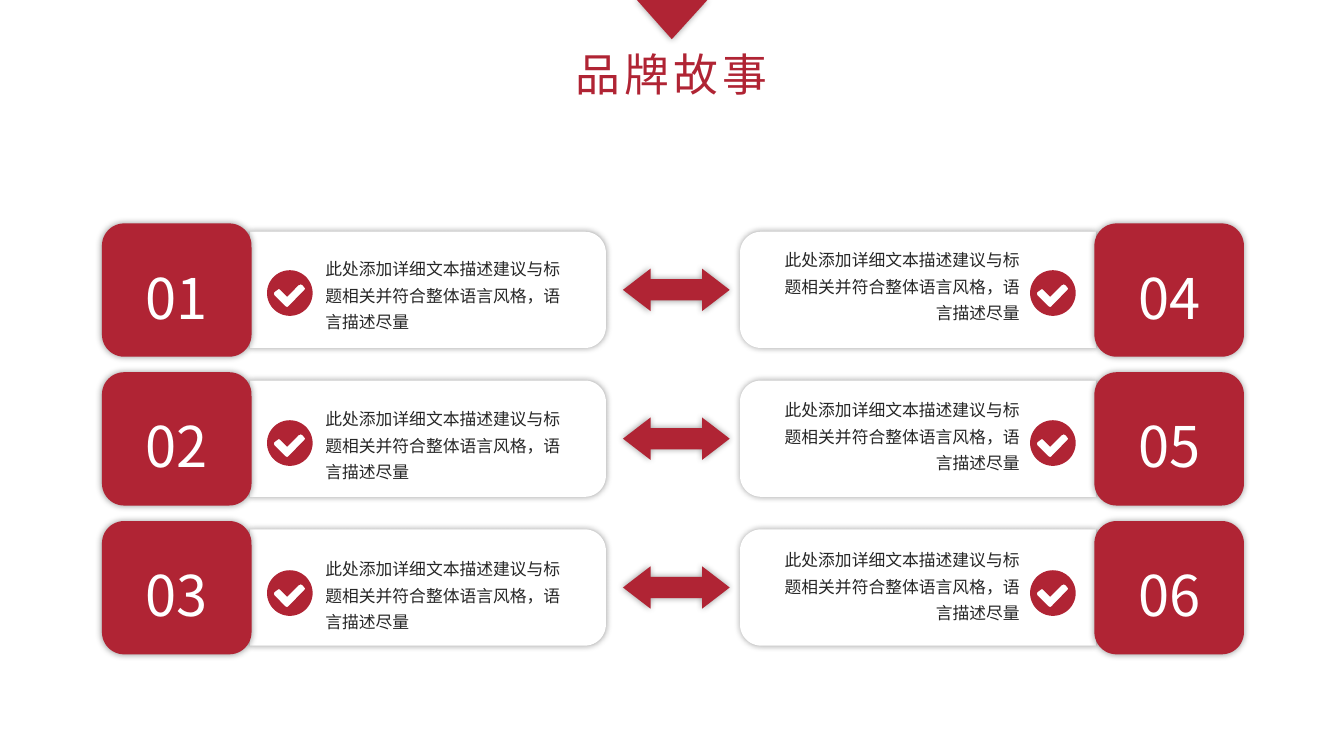
from math import cos, radians, sin

from lxml.etree import SubElement
from pptx import Presentation
from pptx.dml.color import RGBColor
from pptx.enum.shapes import MSO_SHAPE
from pptx.enum.text import MSO_ANCHOR, MSO_AUTO_SIZE, PP_ALIGN
from pptx.oxml.ns import qn
from pptx.util import Cm, Pt

RED = RGBColor(0xB0, 0x24, 0x34)
WHITE = RGBColor(0xFF, 0xFF, 0xFF)
INK = RGBColor(0x26, 0x26, 0x26)
FACE = "Noto Sans CJK SC"
BODY = "此处添加详细文本描述建议与标题相关并符合整体语言风格，语言描述尽量"

WIDTH = 12.7        # one card, badge and panel together
PITCH = 3.75        # from one row to the next
DRIFT = 0.03        # extra step of the icon and text in each row
SIDES = {
    "left": {"x": 2.57, "first": 1, "badge": 0, "icon": 4.16,
             "text": 5.63, "drop": 0.75, "align": PP_ALIGN.LEFT},
    "right": {"x": 18.65, "first": 4, "badge": 8.93, "icon": 7.31,
              "text": 0.83, "drop": 0.52, "align": PP_ALIGN.RIGHT},
}
# Tick outline, in percent of the icon
TICK = [(82, 38), (78, 33), (74, 31), (69, 33), (44, 58), (29, 43), (26, 41),
        (23, 43), (16, 48), (15, 51), (16, 55), (40, 79), (44, 81), (47, 79),
        (82, 43), (84, 40)]


def paint(shape, color, glow=True):
    """Fill the shape without a line, with a soft shadow if glow is set."""
    shape.fill.solid()
    shape.fill.fore_color.rgb = color
    shape.line.fill.background()
    shape.shadow.inherit = False
    if glow:
        effects = shape.element.spPr.find(qn("a:effectLst"))
        outer = SubElement(effects, qn("a:outerShdw"), blurRad=str(Pt(5)),
                           dist="0", dir="0", algn="ctr", rotWithShape="0")
        black = SubElement(outer, qn("a:srgbClr"), val="000000")
        SubElement(black, qn("a:alpha"), val="40000")


def write(shape, text, size, color, frame, para, spacing=0):
    """Put one paragraph in the shape, with frame and paragraph formats."""
    body = shape.text_frame
    body.word_wrap = True
    line = body.paragraphs[0]
    run = line.add_run()
    run.text = text
    font = {"size": Pt(size), "name": FACE, "bold": False}
    for target, formats in ((body, frame), (line, para), (run.font, font)):
        for key, value in formats.items():
            setattr(target, key, value)
    run.font.color.rgb = color
    props = run._r.get_or_add_rPr()
    SubElement(props, qn("a:ea"), typeface=FACE)
    if spacing:
        props.set("spc", str(spacing * 100))


def margins(side, top):
    return {"margin_left": Cm(side), "margin_right": Cm(side),
            "margin_top": Cm(top), "margin_bottom": Cm(top)}


def add_preset(slide, kind, x, y, w, h, color):
    shape = slide.shapes.add_shape(kind, Cm(x), Cm(y), Cm(w), Cm(h))
    paint(shape, color)
    return shape


def add_outline(slide, loops):
    """Draw closed loops of points, given in cm, as one shape."""
    loops = [[(Cm(x), Cm(y)) for x, y in loop] for loop in loops]
    pen = slide.shapes.build_freeform(*loops[0][0])
    for index, loop in enumerate(loops):
        if index:
            pen.move_to(*loop[0])
        pen.add_line_segments(loop[1:], close=True)
    return pen.convert_to_shape()


def arc(x, y, r, start, end, step=6):
    return [(x + r * cos(radians(a)), y + r * sin(radians(a)))
            for a in range(start, end + 1, step)]


def add_panel(slide, x, y, w, h, side):
    """Draw a panel rounded at the end that faces the middle."""
    r = 0.53
    curve = arc(w - r, r, r, -90, 0) + arc(w - r, h - r, r, 0, 90)
    points = [(0, 0)] + curve + [(0, h)]
    if side == "right":
        points = [(w - px, py) for px, py in points]
    panel = add_outline(slide, [[(x + px, y + py) for px, py in points]])
    paint(panel, WHITE)


def add_icon(slide, x, y, size):
    r = size / 2
    disc = arc(x + r, y + r, r, 0, 354)
    tick = [(x + px * size / 100, y + py * size / 100) for px, py in TICK]
    paint(add_outline(slide, [disc, tick]), RED, glow=False)


def add_card(slide, side, row, y):
    look = SIDES[side]
    x = look["x"]
    panel = 3.73 if side == "left" else 0
    add_panel(slide, x + panel, y + 0.21, WIDTH - 3.73, 2.93, side)
    inner = y + row * DRIFT
    add_icon(slide, x + look["icon"], inner + 1.18, 1.15)
    note = slide.shapes.add_textbox(Cm(x + look["text"]),
                                    Cm(inner + look["drop"]), Cm(6.22), Cm(2))
    write(note, BODY, 12, INK,
          {**margins(0, 0), "auto_size": MSO_AUTO_SIZE.SHAPE_TO_FIT_TEXT},
          {"alignment": look["align"], "line_spacing": 1.3})
    badge = add_preset(slide, MSO_SHAPE.ROUNDED_RECTANGLE,
                       x + look["badge"], y, 3.77, 3.36, RED)
    write(badge, f"{look['first'] + row:02}", 40, WHITE,
          {**margins(0, 0), "vertical_anchor": MSO_ANCHOR.MIDDLE},
          {"alignment": PP_ALIGN.CENTER, "line_spacing": 1.2,
           "space_after": Pt(4)})


def add_row(slide, row, top):
    y = top + row * PITCH
    for side in SIDES:
        add_card(slide, side, row, y)
    arrow = add_preset(slide, MSO_SHAPE.LEFT_RIGHT_ARROW,
                       15.7, y + 1.14, 2.69, 1.07, RED)
    arrow.adjustments[0] = 0.5
    arrow.adjustments[1] = 0.651


def add_header(slide, x, y, w, h):
    title = slide.shapes.title
    box = {"left": Cm(x), "top": Cm(y), "width": Cm(w), "height": Cm(h)}
    for key, value in box.items():
        setattr(title, key, value)
    write(title, "品牌故事", 32, RED,
          {**margins(0.18, 0.1), "auto_size": MSO_AUTO_SIZE.NONE,
           "vertical_anchor": MSO_ANCHOR.MIDDLE},
          {"alignment": PP_ALIGN.CENTER}, spacing=3)
    mark = add_preset(slide, MSO_SHAPE.ISOSCELES_TRIANGLE,
                      x + 6.78, 0, 1.78, 0.99, RED)
    mark.adjustments[0] = 0.495
    mark.element.spPr.xfrm.set("flipV", "1")


def main():
    deck = Presentation()
    deck.slide_width, deck.slide_height = Cm(33.87), Cm(19.05)
    slide = deck.slides.add_slide(deck.slide_layouts[5])
    add_header(slide, 9.27, 1.09, 15.32, 1.55)
    for row in range(3):
        add_row(slide, row, 5.63)
    deck.save("out.pptx")


if __name__ == "__main__":
    main()
